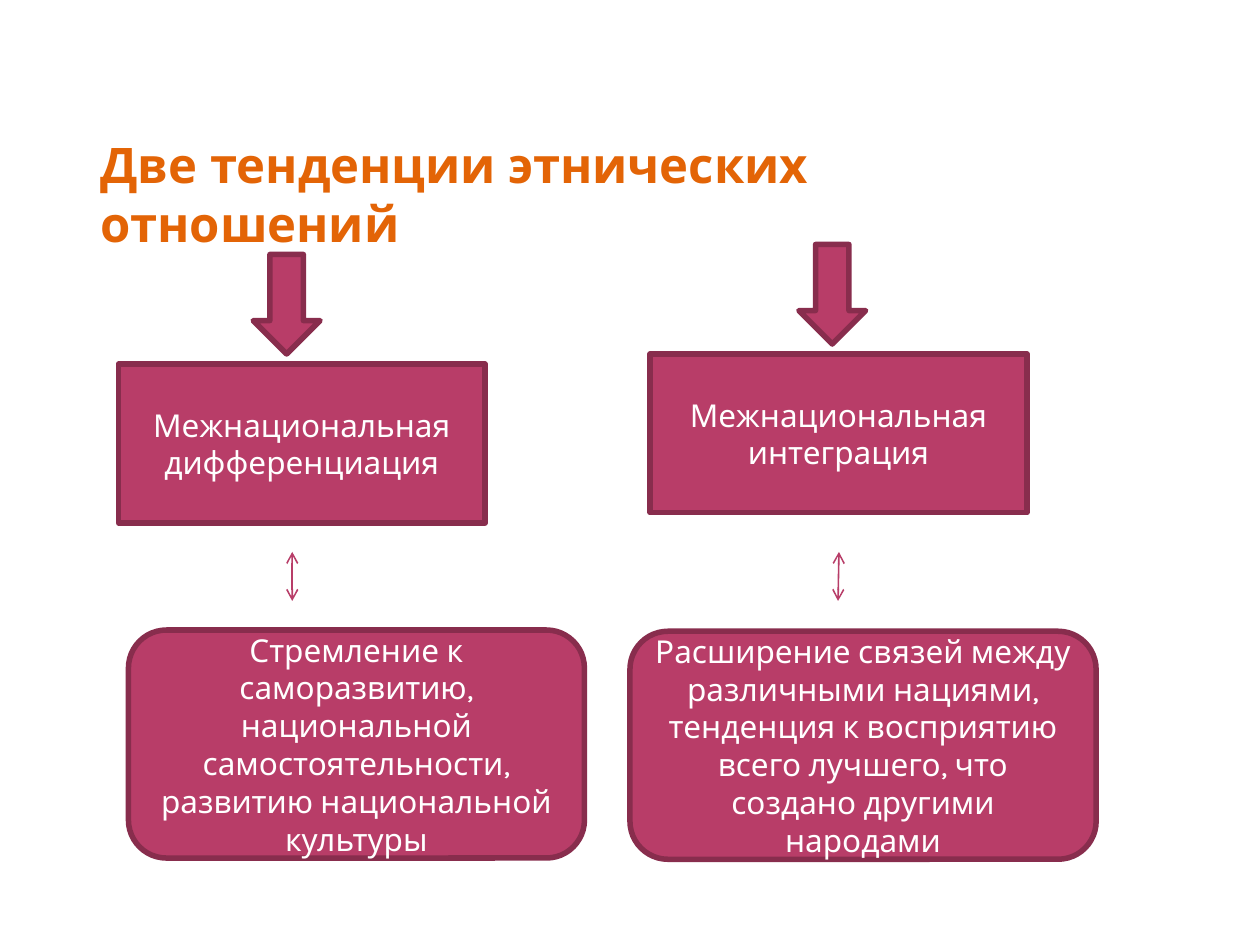
from lxml import etree
from pptx import Presentation
from pptx import util as u
from pptx.dml.color import RGBColor
from pptx.enum import shapes, text
from pptx.oxml.ns import qn

FONT = "Karla"
ORANGE = RGBColor(0xE3, 0x64, 0x06)
PINK = RGBColor(0xB8, 0x3D, 0x68)
DARK_PINK = RGBColor(0x88, 0x2D, 0x4D)
WHITE = RGBColor(0xFF, 0xFF, 0xFF)

TITLE = "Две тенденции этнических отношений"
# Boxes are (left, top, width, height); links are (x1, y1, x2, y2), in points
TENDENCIES = [
    {
        "arrow": (144.7, 145.4, 38.2, 56.9),
        "name": "Межнациональная дифференциация",
        "name_box": (67.7, 208.1, 209.5, 90.7),
        "link": (167, 315.4, 167, 343.4),
        "meaning": "Стремление к саморазвитию, национальной самостоятельности, "
                   "развитию национальной культуры",
        "meaning_box": (73.4, 360, 260.6, 130.3),
    },
    {
        "arrow": (456.5, 139.7, 38.2, 56.9),
        "name": "Межнациональная интеграция",
        "name_box": (371.5, 202.3, 215.3, 90.7),
        "link": (479.4, 315.4, 478.9, 343.4),
        "meaning": "Расширение связей между различными нациями, тенденция к "
                   "восприятию всего лучшего, что создано другими народами",
        "meaning_box": (360, 360.7, 266.4, 130.3),
    },
]


def points(values):
    return [u.Pt(v) for v in values]


def add_run(p, words, size, color, bold=False):
    r = p.add_run()
    r.text = words
    r.font.name = FONT
    r.font.size = u.Pt(size)
    r.font.bold = bold
    r.font.color.rgb = color


def add_block(s, kind, box, words=None):
    sp = s.shapes.add_shape(kind, *points(box))
    sp.shadow.inherit = False
    sp.fill.solid()
    sp.fill.fore_color.rgb = PINK
    sp.line.color.rgb = DARK_PINK
    sp.line.width = u.Pt(3.15)
    if words:
        tf = sp.text_frame
        tf.word_wrap = True
        tf.vertical_anchor = text.MSO_ANCHOR.MIDDLE
        p = tf.paragraphs[0]
        p.alignment = text.PP_ALIGN.CENTER
        add_run(p, words, 18, WHITE)


def add_double_arrow(s, ends):
    line = s.shapes.add_connector(shapes.MSO_CONNECTOR.STRAIGHT, *points(ends))
    line.line.color.rgb = PINK
    line.line.width = u.Pt(0.9)
    ln = line.line._get_or_add_ln()
    for tag in ("a:headEnd", "a:tailEnd"):
        etree.SubElement(ln, qn(tag), type="arrow")
    etree.SubElement(ln.getparent(), qn("a:effectLst"))


def main():
    prs = Presentation()
    prs.slide_width, prs.slide_height = points((720, 540))
    s = prs.slides.add_slide(prs.slide_layouts[6])

    tf = s.shapes.add_textbox(*points((50.4, 73.4, 555.8, 41))).text_frame
    tf.word_wrap = True
    tf.auto_size = text.MSO_AUTO_SIZE.SHAPE_TO_FIT_TEXT
    add_run(tf.paragraphs[0], TITLE, 28, ORANGE, bold=True)

    kinds = shapes.MSO_SHAPE
    for t in TENDENCIES:
        add_block(s, kinds.DOWN_ARROW, t["arrow"])
        add_block(s, kinds.RECTANGLE, t["name_box"], t["name"])
        add_block(s, kinds.ROUNDED_RECTANGLE, t["meaning_box"], t["meaning"])
        add_double_arrow(s, t["link"])

    prs.save("out.pptx")


if __name__ == "__main__":
    main()
